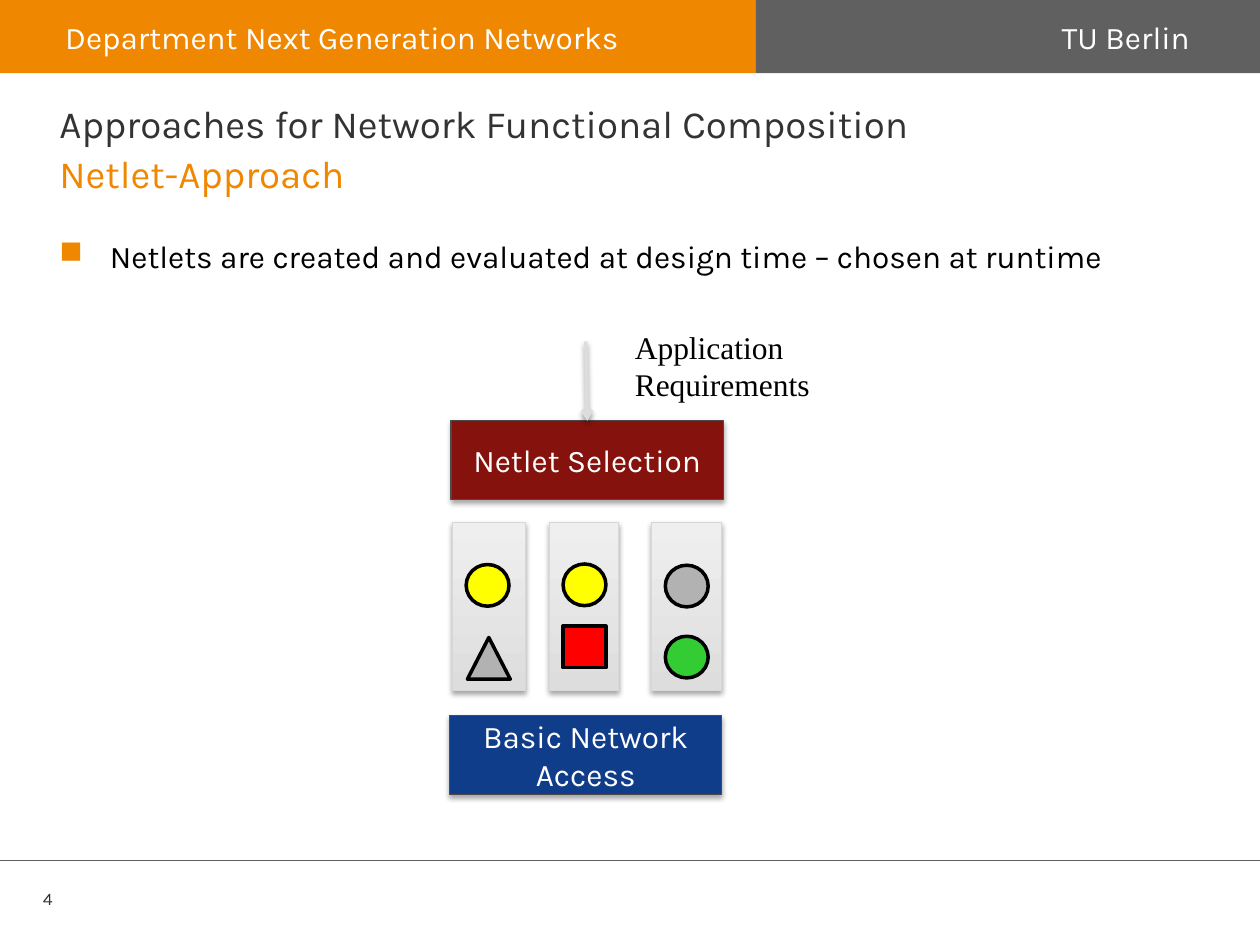
import pptx
import pptx.dml.color
import pptx.enum.shapes
import pptx.enum.text
import pptx.oxml
import pptx.oxml.ns
import pptx.util
from lxml import etree

Pt = pptx.util.Pt
RGBColor = pptx.dml.color.RGBColor
Shape = pptx.enum.shapes.MSO_SHAPE
Align = pptx.enum.text.PP_ALIGN
Anchor = pptx.enum.text.MSO_ANCHOR
qn = pptx.oxml.ns.qn

ORANGE = RGBColor(0xF0, 0x87, 0x00)
GRAY = RGBColor(0x60, 0x60, 0x60)
DARK = RGBColor(0x33, 0x33, 0x33)
BLACK = RGBColor(0, 0, 0)
WHITE = RGBColor(0xFF, 0xFF, 0xFF)
YELLOW = RGBColor(0xFF, 0xFF, 0x00)
RED = RGBColor(0xFF, 0x00, 0x00)
GREEN = RGBColor(0x33, 0xCC, 0x33)
SILVER = RGBColor(0xB2, 0xB2, 0xB2)
MAROON = RGBColor(0x86, 0x12, 0x0D)
BLUE = RGBColor(0x10, 0x3D, 0x8A)
EDGE = RGBColor(0x4B, 0x4B, 0x4B)
CARD_EDGE = RGBColor(0xD8, 0xD8, 0xD8)
CARD_LOW = RGBColor(0xDD, 0xDD, 0xDD)
CARD_HIGH = RGBColor(0xEF, 0xEF, 0xEF)


class Page:
    font = "Karla"
    size = 18

    def __init__(self, deck):
        self.shapes = deck.slides.add_slide(deck.slide_layouts[6]).shapes

    def add_span(self, para, words, color, size=None, font=None):
        span = para.add_run()
        span.text = words
        span.font.name = font or self.font
        span.font.size = Pt(size or self.size)
        span.font.color.rgb = color

    def text(self, place, words, color, size=None, font=None, align=Align.LEFT,
             inset=(0, 0, 0, 0), anchor=Anchor.TOP):
        box = self.shapes.add_textbox(*map(Pt, place))
        frame = box.text_frame
        frame.word_wrap = True
        frame.vertical_anchor = anchor
        (frame.margin_left, frame.margin_top,
         frame.margin_right, frame.margin_bottom) = map(Pt, inset)
        para = frame.paragraphs[0]
        para.alignment = align
        self.add_span(para, words, color, size, font)
        return para

    def bullet(self, place, words, color, mark, indent):
        para = self.text(place, words, color)
        properties = para._p.get_or_add_pPr()
        properties.set("marL", str(Pt(indent)))
        properties.set("indent", str(-Pt(indent)))
        tint = etree.SubElement(properties, qn("a:buClr"))
        etree.SubElement(tint, qn("a:srgbClr"), val=str(mark))
        etree.SubElement(properties, qn("a:buChar"), char="■")

    def shape(self, kind, place, fill, edge=None, weight=0.75):
        shape = self.shapes.add_shape(kind, *map(Pt, place))
        shape.shadow.inherit = False
        if isinstance(fill, RGBColor):
            shape.fill.solid()
            shape.fill.fore_color.rgb = fill
        else:
            shape.fill.gradient()
            shape.fill.gradient_angle = 90
            for stop, color in zip(shape.fill.gradient_stops, fill):
                stop.color.rgb = color
        if edge is None:
            shape.line.fill.background()
        else:
            shape.line.color.rgb = edge
            shape.line.width = Pt(weight)
        return shape

    def cast_shadow(self, effects, opacity=35):
        shadow = etree.SubElement(
            effects, qn("a:outerShdw"), blurRad=str(Pt(3.1)),
            dist=str(Pt(1.8)), dir="5400000", rotWithShape="0")
        color = etree.SubElement(shadow, qn("a:srgbClr"), val=str(BLACK))
        etree.SubElement(color, qn("a:alpha"), val=str(opacity * 1000))

    def raised(self, place, fill, edge, words=None):
        shape = self.shape(Shape.RECTANGLE, place, fill, edge)
        self.cast_shadow(shape._element.spPr.find(qn("a:effectLst")))
        if words:
            frame = shape.text_frame
            frame.word_wrap = True
            frame.vertical_anchor = Anchor.MIDDLE
            para = frame.paragraphs[0]
            para.alignment = Align.CENTER
            self.add_span(para, words, WHITE)
        return shape

    def line(self, start, end, color, weight, target=None):
        line = self.shapes.add_connector(
            pptx.enum.shapes.MSO_CONNECTOR.STRAIGHT, *map(Pt, start + end))
        line.line.color.rgb = color
        line.line.width = Pt(weight)
        properties = line._element.spPr
        effects = etree.SubElement(properties, qn("a:effectLst"))
        if target is not None:
            line.end_connect(target, 0)
            etree.SubElement(properties.find(qn("a:ln")), qn("a:tailEnd"), type="arrow")
            self.cast_shadow(effects, 38)


def main():
    deck = pptx.Presentation()
    deck.slide_width, deck.slide_height = Pt(720), Pt(540)
    page = Page(deck)

    page.shape(Shape.RECTANGLE, (0, 0, 432, 41.8), ORANGE)
    page.shape(Shape.RECTANGLE, (432, 0, 288, 41.8), GRAY)
    page.line((0, 491.8), (720, 491.8), GRAY, 0.5)
    page.text((24.5, 504.7, 325, 17.3), "4", DARK, 10, anchor=Anchor.MIDDLE)
    inset = (7.2, 3.6, 7.2, 3.6)
    page.text((440, 6.5, 247, 29), "TU Berlin", WHITE, align=Align.RIGHT, inset=inset)
    page.text((30.2, 6.5, 373, 29), "Department Next Generation Networks", WHITE, inset=inset)

    page.text((34, 57, 652, 29), "Approaches for Network Functional Composition", DARK, 22)
    page.text((34, 85.7, 652, 31), "Netlet-Approach", ORANGE, 22)
    page.bullet((34, 135.4, 652, 347),
                "Netlets are created and evaluated at design time – chosen at runtime",
                BLACK, ORANGE, 28.8)

    for left, width in ((258.5, 41.8), (313.9, 39.6), (372.2, 40.3)):
        page.raised((left, 298.8, width, 95.8), (CARD_LOW, CARD_HIGH), CARD_EDGE)

    selection = page.raised((257.8, 240.5, 155.5, 44.9), MAROON, EDGE, "Netlet Selection")
    page.raised((257, 409, 155.5, 44.9), BLUE, EDGE, "Basic Network Access")

    symbols = (
        (Shape.OVAL, 266.4, 322.6, YELLOW),
        (Shape.ISOSCELES_TRIANGLE, 267.1, 364.3, SILVER),
        (Shape.OVAL, 321.8, 322.3, YELLOW),
        (Shape.RECTANGLE, 321.8, 357.8, RED),
        (Shape.OVAL, 380.2, 323, SILVER),
        (Shape.OVAL, 380.2, 363.6, GREEN),
    )
    for kind, left, top, fill in symbols:
        page.shape(kind, (left, top, 24.5, 23.8), fill, BLACK, 2)

    page.line((334.8, 195.1), (335.5, 240.5), CARD_LOW, 2, selection)
    page.text((355.7, 183.6, 139.7, 51), "Application Requirements", BLACK,
              font="Times New Roman", inset=inset)

    deck.save("out.pptx")


if __name__ == "__main__":
    main()
